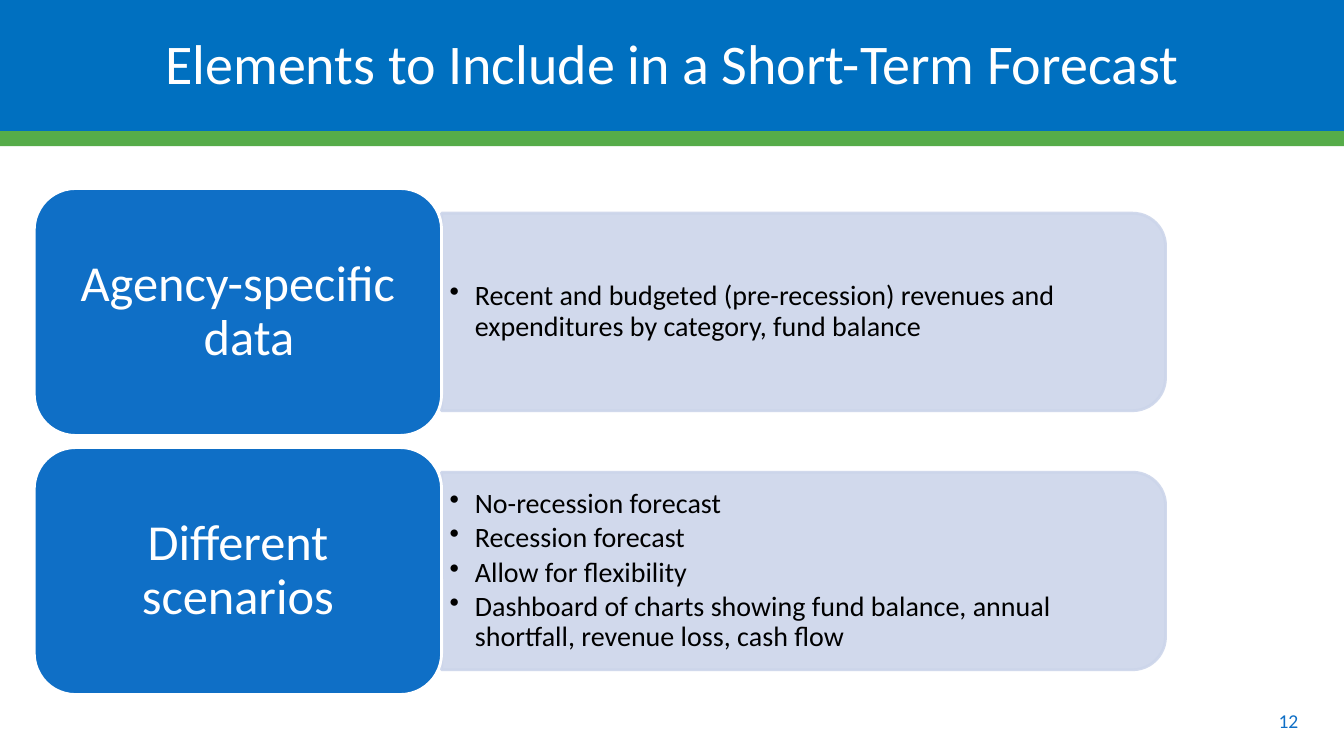
import pptx
import pptx.util
import pptx.dml.color
import pptx.enum.shapes
import pptx.enum.text
import pptx.oxml
import pptx.oxml.ns
from pptx.util import Inches

TITLE = "Elements to Include in a Short-Term Forecast"
PAGE_NUMBER = "12"
# heading, (left margin, first-line indent) of the heading, bullets
ROWS = [
    ("Agency-specific data", (0.22, -0.56), [
        "Recent and budgeted (pre-recession) revenues\u00a0and expenditures by category, fund balance",
    ]),
    ("Different scenarios", (0, 0), [
        "No-recession forecast",
        "Recession forecast",
        "Allow for flexibility",
        "Dashboard of charts showing fund balance, annual shortfall, revenue loss, cash flow",
    ]),
]

FONT = "Calibri"
WHITE, BLACK = "FFFFFF", "000000"
BANNER_BLUE, GREEN, LABEL_BLUE, PALE = "0070C0", "56AC49", "0F6FC6", "CCD5EA"
SLIDE_W, SLIDE_H = 13.33, 7.5
LABEL_LEFT, LABEL_W, LABEL_H = 0.34, 4.04, 2.45
FIRST_TOP, ROW_STEP = 1.87, 2.57
PANEL_W, PANEL_H = 7.18, 1.96
BULLETS_W, BULLETS_H = 7.09, 1.77

SHAPES = pptx.enum.shapes.MSO_SHAPE
CENTER = pptx.enum.text.PP_ALIGN.CENTER
LEFT = pptx.enum.text.PP_ALIGN.LEFT


def color(hex_code):
    return pptx.dml.color.RGBColor.from_string(hex_code)


def add_block(page, kind, at, fill, line=None):
    block = page.shapes.add_shape(kind, *map(Inches, at))
    block.shadow.inherit = False
    block.fill.solid()
    block.fill.fore_color.rgb = color(fill)
    if line:
        block.line.color.rgb = color(line)
        block.line.width = pptx.util.Pt(2)
    else:
        block.line.fill.background()
    return block


def set_alpha(block, percent):
    """Make fill and line of a block partly transparent."""
    for tint in block._element.spPr.iter(pptx.oxml.ns.qn("a:srgbClr")):
        tint.append(pptx.oxml.parse_xml(
            f'<a:alpha {pptx.oxml.ns.nsdecls("a")} val="{percent * 1000}"/>'))


def write(box, lines, size, ink, insets, align=CENTER, spacing=0.9,
          after=0, indent=(0, 0), bullet=False):
    frame = box.text_frame
    frame.word_wrap = True
    frame.vertical_anchor = pptx.enum.text.MSO_ANCHOR.MIDDLE
    for side, inset in zip(("left", "top", "right", "bottom"), insets):
        setattr(frame, f"margin_{side}", Inches(inset))
    for number, line in enumerate(lines):
        para = frame.add_paragraph() if number else frame.paragraphs[0]
        span = para.add_run()
        span.text = line
        properties = para._p.get_or_add_pPr()
        for name, length in zip(("marL", "indent"), indent):
            properties.set(name, str(int(Inches(length))))
        if bullet:
            properties.append(pptx.oxml.parse_xml(
                f'<a:buChar {pptx.oxml.ns.nsdecls("a")} char="•"/>'))
        layout = {"alignment": align, "line_spacing": spacing,
                  "space_after": pptx.util.Pt(after)}
        for name, value in layout.items():
            setattr(para, name, value)
        for name, value in {"name": FONT, "size": pptx.util.Pt(size)}.items():
            setattr(span.font, name, value)
        span.font.color.rgb = color(ink)


def add_row(page, top, heading, indent, bullets):
    middle = top + LABEL_H / 2
    panel_left = LABEL_LEFT + LABEL_W
    # The panel is drawn upright and turned so that its round corners face right.
    panel = add_block(page, SHAPES.ROUND_2_SAME_RECTANGLE,
                      (panel_left + (PANEL_W - PANEL_H) / 2, middle - PANEL_W / 2,
                       PANEL_H, PANEL_W), PALE, PALE)
    panel.rotation = 90
    set_alpha(panel, 90)
    box = page.shapes.add_textbox(*map(Inches, (
        panel_left, middle - BULLETS_H / 2, BULLETS_W, BULLETS_H)))
    write(box, bullets, 20, BLACK, (0.08, 0.04, 0.08, 0.04), align=LEFT,
          after=3, indent=(0.25, -0.25), bullet=True)
    label = add_block(page, SHAPES.ROUNDED_RECTANGLE,
                      (LABEL_LEFT, top, LABEL_W, LABEL_H), LABEL_BLUE, WHITE)
    write(label, [heading], 36, WHITE, (0.15, 0.07, 0.15, 0.07), indent=indent)


def main():
    deck = pptx.Presentation()
    deck.slide_width, deck.slide_height = Inches(SLIDE_W), Inches(SLIDE_H)
    page = deck.slides.add_slide(deck.slide_layouts[6])

    add_block(page, SHAPES.RECTANGLE, (0, 1.3, SLIDE_W, 0.15), GREEN)
    banner = add_block(page, SHAPES.RECTANGLE, (0, -0.03, SLIDE_W, 1.33), BANNER_BLUE)
    write(banner, [TITLE], 40, WHITE, (0.1, 0.1, 0.1, 0.05))

    for number, row in enumerate(ROWS):
        add_row(page, FIRST_TOP + number * ROW_STEP, *row)

    number_box = page.shapes.add_textbox(*map(Inches, (12.28, 6.95, 1, 0.4)))
    write(number_box, [PAGE_NUMBER], 14, LABEL_BLUE, (0.1, 0.05, 0.1, 0.05), spacing=1.0)
    deck.save("out.pptx")


if __name__ == "__main__":
    main()
